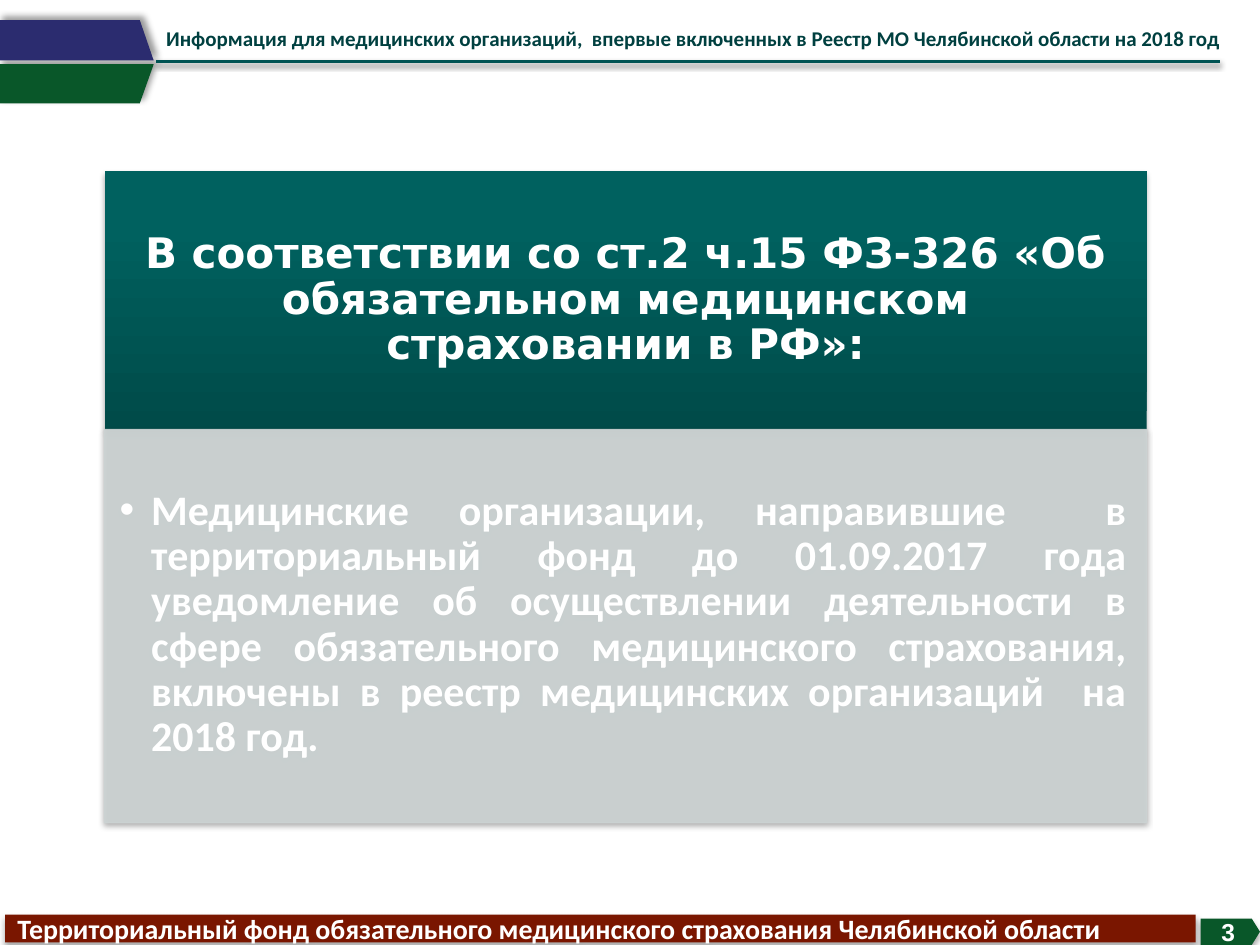
import pptx
import pptx.util
import pptx.dml.color
import pptx.enum.dml
import pptx.enum.shapes
import pptx.enum.text
import pptx.oxml
import pptx.oxml.ns

Inches = pptx.util.Inches
Pt = pptx.util.Pt
RGBColor = pptx.dml.color.RGBColor
MSO_SHAPE = pptx.enum.shapes.MSO_SHAPE
PP_ALIGN = pptx.enum.text.PP_ALIGN
MSO_ANCHOR = pptx.enum.text.MSO_ANCHOR
qn = pptx.oxml.ns.qn

WHITE = RGBColor(0xFF, 0xFF, 0xFF)
GREEN = RGBColor(0x09, 0x57, 0x29)
NAVY = RGBColor(0x2B, 0x2C, 0x6F)
RULE = RGBColor(0x00, 0x53, 0x53)
HEADER_TEXT = RGBColor(0x00, 0x40, 0x40)
TEAL_DARK = RGBColor(0x00, 0x4B, 0x49)
TEAL = RGBColor(0x00, 0x61, 0x5F)
GREY = RGBColor(0xCC, 0xD3, 0xD3)
MAROON = RGBColor(0x7A, 0x16, 0x00)

CARD_LEFT, CARD_TOP, CARD_WIDTH = 0.83, 1.36, 8.27
HEAD_HEIGHT, BODY_HEIGHT = 2.05, 3.12


def add_shadow(sp, alpha, blur, dist, angle):
    """Black outer shadow; call after fill and line are set."""
    effects = pptx.oxml.parse_xml(
        '<a:effectLst xmlns:a="http://schemas.openxmlformats.org/drawingml/2006/main">'
        f'<a:outerShdw blurRad="{Pt(blur)}" dist="{Pt(dist)}" dir="{angle * 60000}" '
        'algn="ctr" rotWithShape="0"><a:srgbClr val="000000">'
        f'<a:alpha val="{alpha * 1000}"/></a:srgbClr></a:outerShdw></a:effectLst>')
    sp._element.spPr.append(effects)


def set_alpha(fill, percent):
    color = fill._xPr.find(qn("a:solidFill"))[0]
    color.append(pptx.oxml.parse_xml(
        '<a:alpha xmlns:a="http://schemas.openxmlformats.org/drawingml/2006/main" '
        f'val="{percent * 1000}"/>'))


def place(sp, left, top, width, height):
    sp.left, sp.top = Inches(left), Inches(top)
    sp.width, sp.height = Inches(width), Inches(height)


def set_frame(tf, anchor, insets):
    tf.word_wrap = True
    tf.auto_size = pptx.enum.text.MSO_AUTO_SIZE.NONE
    tf.vertical_anchor = anchor
    tf.margin_left, tf.margin_top, tf.margin_right, tf.margin_bottom = map(Inches, insets)


def write(tf, text, font, size, color, align=PP_ALIGN.LEFT):
    p = tf.paragraphs[0]
    p.alignment = align
    r = p.add_run()
    r.text = text
    r.font.name = font
    r.font.size = Pt(size)
    r.font.bold = True
    r.font.color.rgb = color
    return p


def add_tab(slide, points, color):
    builder = slide.shapes.build_freeform(
        Inches(points[0][0]), Inches(points[0][1]), scale=1.0)
    builder.add_line_segments([(Inches(x), Inches(y)) for x, y in points[1:]], close=True)
    sp = builder.convert_to_shape()
    sp.fill.solid()
    sp.fill.fore_color.rgb = color
    sp.line.fill.background()
    add_shadow(sp, 40, 4, 3, 315)


def add_header(slide):
    add_tab(slide, [(1.22, 0.51), (1.11, 0.82), (-0.01, 0.82), (-0.01, 0.51)], GREEN)
    add_tab(slide, [(1.22, 0.48), (1.11, 0.16), (-0.01, 0.16), (-0.01, 0.48)], NAVY)
    rule = slide.shapes.add_connector(
        pptx.enum.shapes.MSO_CONNECTOR.STRAIGHT,
        Inches(1.24), Inches(0.49), Inches(9.68), Inches(0.49))
    rule.line.color.rgb = RULE
    rule.line.width = Pt(2)
    add_shadow(rule, 38, 3.1, 1.6, 90)
    sp = slide.shapes.add_textbox(Inches(1.22), Inches(0.15), Inches(8.78), Inches(0.61))
    set_frame(sp.text_frame, MSO_ANCHOR.TOP, (0.1, 0.05, 0.1, 0.05))
    write(sp.text_frame,
          "Информация для медицинских организаций,  впервые включенных "
          "в Реестр МО Челябинской области на 2018 год",
          "Calibri", 12, HEADER_TEXT)


def fill_title(sp):
    place(sp, CARD_LEFT, CARD_TOP, CARD_WIDTH, HEAD_HEIGHT)
    sp.fill.gradient()
    sp.fill.gradient_angle = 90
    for stop, position, color in zip(sp.fill.gradient_stops, (0, 0.8), (TEAL_DARK, TEAL)):
        stop.position = position
        stop.color.rgb = color
    add_shadow(sp, 35, 3.1, 1.8, 90)
    set_frame(sp.text_frame, MSO_ANCHOR.MIDDLE, (0.19, 0.11, 0.19, 0.11))
    p = write(sp.text_frame,
              "В соответствии со ст.2 ч.15 ФЗ-326 «Об обязательном "
              "медицинском страховании в РФ»:",
              "DejaVu Sans", 24, WHITE, PP_ALIGN.CENTER)
    p.line_spacing = 0.9


def fill_body(sp):
    place(sp, CARD_LEFT, CARD_TOP + HEAD_HEIGHT, CARD_WIDTH, BODY_HEIGHT)
    sp.fill.solid()
    sp.fill.fore_color.rgb = GREY
    set_alpha(sp.fill, 90)
    sp.line.color.rgb = GREY
    sp.line.width = Pt(0.75)
    set_alpha(sp.line.fill, 90)
    add_shadow(sp, 35, 3.1, 1.8, 90)
    set_frame(sp.text_frame, MSO_ANCHOR.TOP, (0.12, 0.47, 0.16, 0.17))
    p = write(sp.text_frame,
              "Медицинские организации, направившие  в территориальный фонд "
              "до 01.09.2017 года уведомление об осуществлении деятельности "
              "в сфере обязательного медицинского страхования, включены "
              "в реестр медицинских организаций  на 2018 год.",
              "Calibri", 24, WHITE, PP_ALIGN.JUSTIFY)
    p.line_spacing = 0.9
    p.space_before = Pt(0)
    # Hanging bullet
    pPr = p._p.get_or_add_pPr()
    pPr.set("marL", str(Inches(0.25)))
    pPr.set("indent", str(-Inches(0.25)))
    pPr.append(pptx.oxml.parse_xml(
        '<a:buChar xmlns:a="http://schemas.openxmlformats.org/drawingml/2006/main" char="•"/>'))


def add_footer_shape(slide, kind, box, color, text, font, size, align):
    sp = slide.shapes.add_shape(kind, *map(Inches, box))
    sp.fill.solid()
    sp.fill.fore_color.rgb = color
    sp.line.fill.background()
    add_shadow(sp, 32, 3.5, 2.2, 90)
    set_frame(sp.text_frame, MSO_ANCHOR.MIDDLE, (0.1, 0.05, 0.1, 0.05))
    write(sp.text_frame, text, font, size, WHITE, align)
    return sp


def main():
    prs = pptx.Presentation()
    prs.slide_width, prs.slide_height = Inches(10), Inches(7.5)
    slide = prs.slides.add_slide(prs.slide_layouts[1])

    # Central card: heading and list
    fill_title(slide.shapes.title)
    fill_body(slide.placeholders[1])

    # Header band
    add_header(slide)

    # Footer bar and page number
    add_footer_shape(slide, MSO_SHAPE.RECTANGLE, (0.04, 7.26, 9.45, 0.22), MAROON,
                     "Территориальный фонд обязательного медицинского "
                     "страхования Челябинской области",
                     "Calibri", 16, PP_ALIGN.LEFT)
    page = add_footer_shape(slide, MSO_SHAPE.PENTAGON, (9.53, 7.29, 0.47, 0.21), GREEN,
                            "3", "Arial", 14, PP_ALIGN.CENTER)
    page.adjustments[0] = 0.31

    prs.save("out.pptx")


if __name__ == "__main__":
    main()
